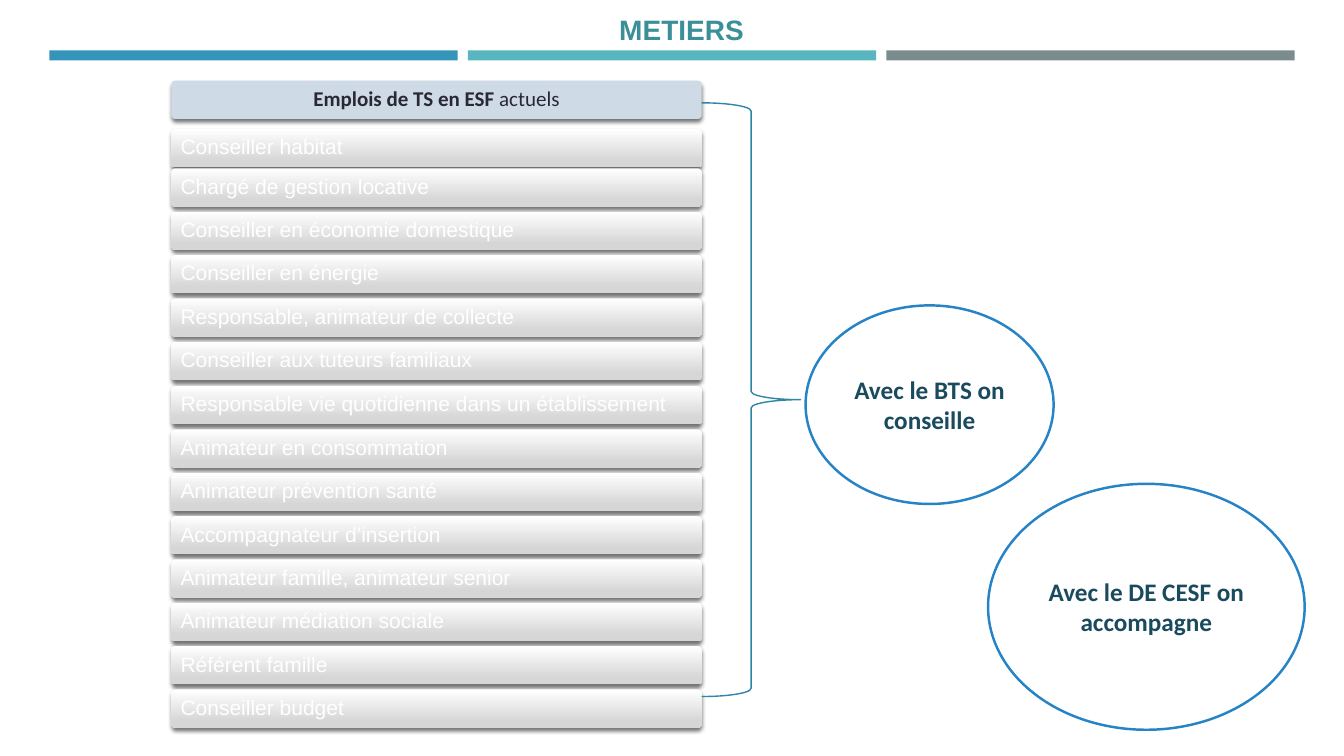
"""Build the METIERS slide: current TS en ESF jobs, and what each diploma leads to."""
from lxml import etree
from pptx import Presentation
from pptx.dml.color import RGBColor
from pptx.enum import shapes, text
from pptx.oxml.ns import qn
from pptx.util import Pt

PX = 9144
THEME = {
    "bars": ["3494BA", "58B6C0", "7A8C8E"],
    "title": ("Arial", 20, "3A8F98"),
    "head": ("Calibri", 15, "292834"),
    "job": ("Arial", 15, "FFFFFF"),
    "goal": ("Calibri", 18, "1A4A5D"),
    "headfill": "CEDBE6",
    "fade": [(0, "FFFFFF"), (0.84, "D6D6D6")],
    "white": "FFFFFF",
    "ring": ("2683C6", 1.75),
    "brace": ("2F85A7", 1),
    "shade": "000000",
}
JOBS = [
    "Conseiller habitat",
    "Chargé de gestion locative",
    "Conseiller en économie domestique",
    "Conseiller en énergie",
    "Responsable, animateur de collecte",
    "Conseiller aux tuteurs familiaux",
    "Responsable vie quotidienne dans un établissement",
    "Animateur en consommation",
    "Animateur prévention santé",
    "Accompagnateur d’insertion",
    "Animateur famille, animateur senior",
    "Animateur médiation sociale",
    "Référent famille",
    "Conseiller budget",
]
GOALS = [
    ("Avec le DE CESF on accompagne", (980, 480, 314, 244)),
    ("Avec le BTS on conseille", (799, 303, 246, 197)),
]
KIND = shapes.MSO_SHAPE

prs = Presentation()
prs.slide_width, prs.slide_height = 1333 * PX, 750 * PX
slide = prs.slides.add_slide(prs.slide_layouts[6])


def draw(kind, box, fill=None, line=None):
    """Add a shape without shadow, with an optional fill and outline."""
    shape = slide.shapes.add_shape(kind, *[n * PX for n in box])
    shape.shadow.inherit = False
    if fill:
        shape.fill.solid()
        shape.fill.fore_color.rgb = RGBColor.from_string(fill)
    else:
        shape.fill.background()
    if line:
        shape.line.color.rgb = RGBColor.from_string(line[0])
        shape.line.width = Pt(line[1])
    else:
        shape.line.fill.background()
    return shape


def write(shape, style, runs, align=text.PP_ALIGN.CENTER):
    """Write (words, bold) runs into the first paragraph of a shape."""
    face, size, color = THEME[style]
    shape.text_frame.word_wrap = True
    para = shape.text_frame.paragraphs[0]
    para.alignment = align
    for words, bold in runs:
        run = para.add_run()
        run.text = words
        run.font.name, run.font.size, run.font.bold = face, Pt(size), bold
        run.font.color.rgb = RGBColor.from_string(color)
    return para


for i, color in enumerate(THEME["bars"]):
    draw(KIND.RECTANGLE, (49 + 415 * i, 50, 405, 10), color)

title = slide.shapes.add_textbox(215 * PX, 7 * PX, 922 * PX, 44 * PX)
write(title, "title", [("METIERS", True)])

rows = [(80, "head", [("Emplois de TS en ESF", True), (" actuels", False)])]
for i, job in enumerate(JOBS):
    top = 167 + round(43.1 * (i - 1)) if i else 128
    rows.append((top, "job", [(job, False)]))

for top, style, runs in rows:
    row = draw(KIND.ROUNDED_RECTANGLE, (170, top, 526, 38), THEME["headfill"])
    row.adjustments[0] = 0.1
    align = text.PP_ALIGN.CENTER
    if style == "job":
        align = text.PP_ALIGN.LEFT
        row.fill.gradient()
        row.fill.gradient_angle = 270
        for stop, (spot, color) in zip(row.fill.gradient_stops, THEME["fade"]):
            stop.position = spot
            stop.color.rgb = RGBColor.from_string(color)
    fx = row._element.spPr.find(qn("a:effectLst"))
    shade = etree.SubElement(fx, qn("a:outerShdw"), blurRad=str(Pt(3)),
                             dist=str(Pt(2)), dir="5400000", rotWithShape="0")
    tint = etree.SubElement(shade, qn("a:srgbClr"), val=THEME["shade"])
    etree.SubElement(tint, qn("a:alpha"), val="55000")
    frame = row.text_frame
    frame.margin_left = frame.margin_right = 8 * PX
    frame.margin_top = frame.margin_bottom = 6 * PX
    frame.vertical_anchor = text.MSO_ANCHOR.MIDDLE
    write(row, style, runs, align).line_spacing = 0.9

draw(KIND.RIGHT_BRACE, (696, 102, 98, 589), line=THEME["brace"])

for words, box in GOALS:
    ring = draw(KIND.OVAL, box, THEME["white"], THEME["ring"])
    ring.text_frame.vertical_anchor = text.MSO_ANCHOR.MIDDLE
    write(ring, "goal", [(words, True)])

prs.save("out.pptx")
